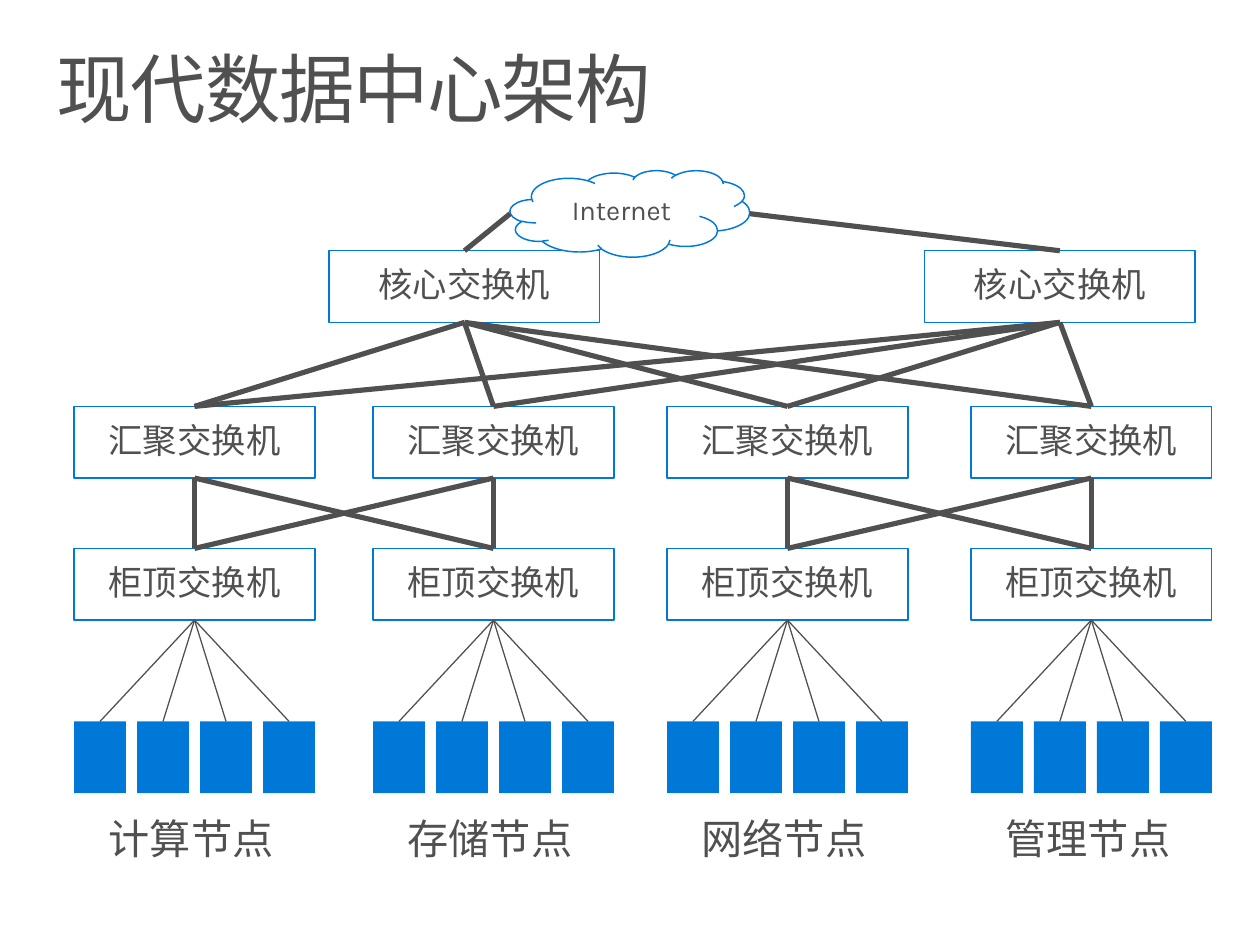
from dataclasses import dataclass
from itertools import product

from lxml import etree
from pptx import Presentation
from pptx import util as u
from pptx.dml.color import RGBColor
from pptx.enum import shapes, text
from pptx.oxml import ns


@dataclass(frozen=True)
class Theme:
    font: str = "Karla"
    ink: str = "505050"
    accent: str = "0078D7"
    paper: str = "FFFFFF"
    title: float = 44
    label: float = 24
    switch: float = 20
    cloud: float = 16
    outline: float = 0.85
    trunk: float = 3
    cable: float = 0.75


THEME = Theme()
WIDTH, HEIGHT = 10.2, 7.65

# Grid in inches: left edges of the four racks, top edges of the tiers
COLUMNS = (0.6, 3.02, 5.4, 7.86)
COLUMN_WIDTH = 1.95
CORE_WIDTH = 2.19
ROW_HEIGHT = 0.58
CLOUD_ROW, CORE_ROW, AGGREGATION_ROW, TOP_OF_RACK_ROW = 1.38, 2.03, 3.29, 4.44
SERVER_ROW, LABEL_ROW = 5.84, 6.47
SERVERS, SERVER_WIDTH = 4, 0.42
SERVER_PITCH = (COLUMN_WIDTH - SERVER_WIDTH) / (SERVERS - 1)
LABEL_INDENT = 0.08
NODE_NAMES = ("计算节点", "存储节点", "网络节点", "管理节点")

# Connection sites of a rectangle
TOP, BOTTOM = 0, 2


def write(shape, words, *, size, align=text.PP_ALIGN.LEFT,
          anchor=text.MSO_ANCHOR.TOP, insets=(0.2, 0.16), after=0, spacing=0):
    frame = shape.text_frame
    frame.word_wrap = True
    frame.vertical_anchor = anchor
    frame.margin_left = frame.margin_right = u.Inches(insets[0])
    frame.margin_top = frame.margin_bottom = u.Inches(insets[1])
    paragraph = frame.paragraphs[0]
    paragraph.alignment = align
    paragraph.line_spacing = 0.9
    paragraph.space_after = u.Pt(after)
    run = paragraph.add_run()
    run.text = words
    run.font.name = THEME.font
    run.font.size = u.Pt(size)
    run.font.color.rgb = RGBColor.from_string(THEME.ink)
    if spacing:
        run.font._element.set("spc", str(round(spacing * 100)))


def add_text(slide, words, left, top, width, height, **style):
    box = slide.shapes.add_textbox(*map(u.Inches, (left, top, width, height)))
    write(box, words, **style)


def add_block(slide, left, top, width, height, fill,
              kind=shapes.MSO_SHAPE.RECTANGLE):
    block = slide.shapes.add_shape(
        kind, *map(u.Inches, (left, top, width, height)))
    block.shadow.inherit = False
    block.fill.solid()
    block.fill.fore_color.rgb = RGBColor.from_string(fill)
    block.line.fill.background()
    return block


def add_device(slide, words, left, top, width, height=ROW_HEIGHT,
               size=THEME.switch, kind=shapes.MSO_SHAPE.RECTANGLE):
    device = add_block(slide, left, top, width, height, THEME.paper, kind)
    device.line.color.rgb = RGBColor.from_string(THEME.accent)
    device.line.width = u.Pt(THEME.outline)
    write(device, words, size=size, align=text.PP_ALIGN.CENTER,
          anchor=text.MSO_ANCHOR.MIDDLE)
    return device


def add_link(slide, lower, upper=None, start=(0, 0), weight=THEME.trunk):
    """Join the top of lower to the bottom of upper, or to a start point."""
    x, y = map(u.Inches, start)
    link = slide.shapes.add_connector(
        shapes.MSO_CONNECTOR.STRAIGHT, x, y, x, y)
    if upper is not None:
        link.begin_connect(upper, BOTTOM)
    link.end_connect(lower, TOP)
    link.line.color.rgb = RGBColor.from_string(THEME.ink)
    link.line.width = u.Pt(weight)
    etree.SubElement(link._element.spPr, ns.qn("a:effectLst"))


def add_rack(slide, name, left):
    """Draw one rack and return its aggregation and top-of-rack switches."""
    aggregation = add_device(
        slide, "汇聚交换机", left, AGGREGATION_ROW, COLUMN_WIDTH)
    top_of_rack = add_device(
        slide, "柜顶交换机", left, TOP_OF_RACK_ROW, COLUMN_WIDTH)
    for index in range(SERVERS):
        server = add_block(slide, left + index * SERVER_PITCH, SERVER_ROW,
                           SERVER_WIDTH, ROW_HEIGHT, THEME.accent)
        add_link(slide, server, top_of_rack, weight=THEME.cable)
    add_text(slide, name, left + LABEL_INDENT, LABEL_ROW, 1.92, 0.69,
             size=THEME.label, after=6)
    return aggregation, top_of_rack


def add_core(slide, pair):
    """Centre a core switch over a pair of rack columns."""
    centre = (sum(pair) + COLUMN_WIDTH) / 2
    return add_device(slide, "核心交换机", centre - CORE_WIDTH / 2 + COLUMN_WIDTH / 2
                      - COLUMN_WIDTH / 2 + COLUMN_WIDTH / 2, CORE_ROW, CORE_WIDTH)


def add_internet(slide, cores):
    width, height = 1.94, 0.7
    left = 4.13
    add_device(slide, "Internet", left, CLOUD_ROW, width, height,
               THEME.cloud, shapes.MSO_SHAPE.CLOUD)
    for core, edge in zip(cores, (left, left + width)):
        add_link(slide, core, start=(edge, CLOUD_ROW + height / 2))


def main():
    presentation = Presentation()
    presentation.slide_width = u.Inches(WIDTH)
    presentation.slide_height = u.Inches(HEIGHT)
    slide = presentation.slides.add_slide(presentation.slide_layouts[6])

    # Title
    add_text(slide, "现代数据中心架构", 0.3, 0.32, 9.6, 1,
             size=THEME.title, insets=(0.16, 0.1), spacing=-0.8)

    # Switches, servers and node names
    racks = [add_rack(slide, *rack) for rack in zip(NODE_NAMES, COLUMNS)]
    cores = [add_core(slide, pair) for pair in (COLUMNS[:2], COLUMNS[2:])]

    # Every core reaches every aggregation switch
    for core, (aggregation, _) in product(cores, racks):
        add_link(slide, aggregation, core)

    # Neighbouring racks are cross-linked in pairs
    for pair in (racks[:2], racks[2:]):
        for (aggregation, _), (_, top_of_rack) in product(pair, repeat=2):
            add_link(slide, top_of_rack, aggregation)

    # Internet uplinks
    add_internet(slide, cores)
    presentation.save("out.pptx")


if __name__ == "__main__":
    main()
